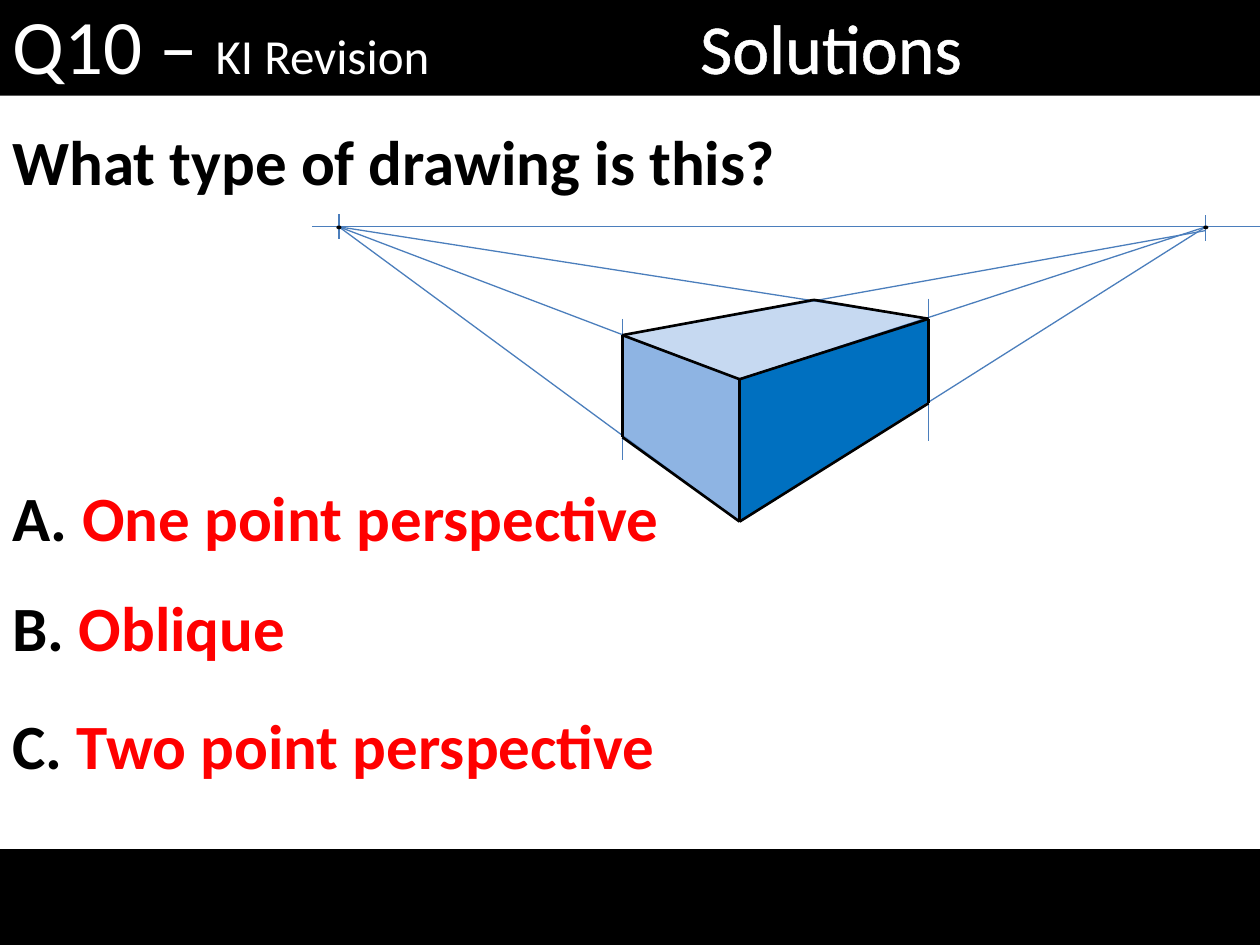
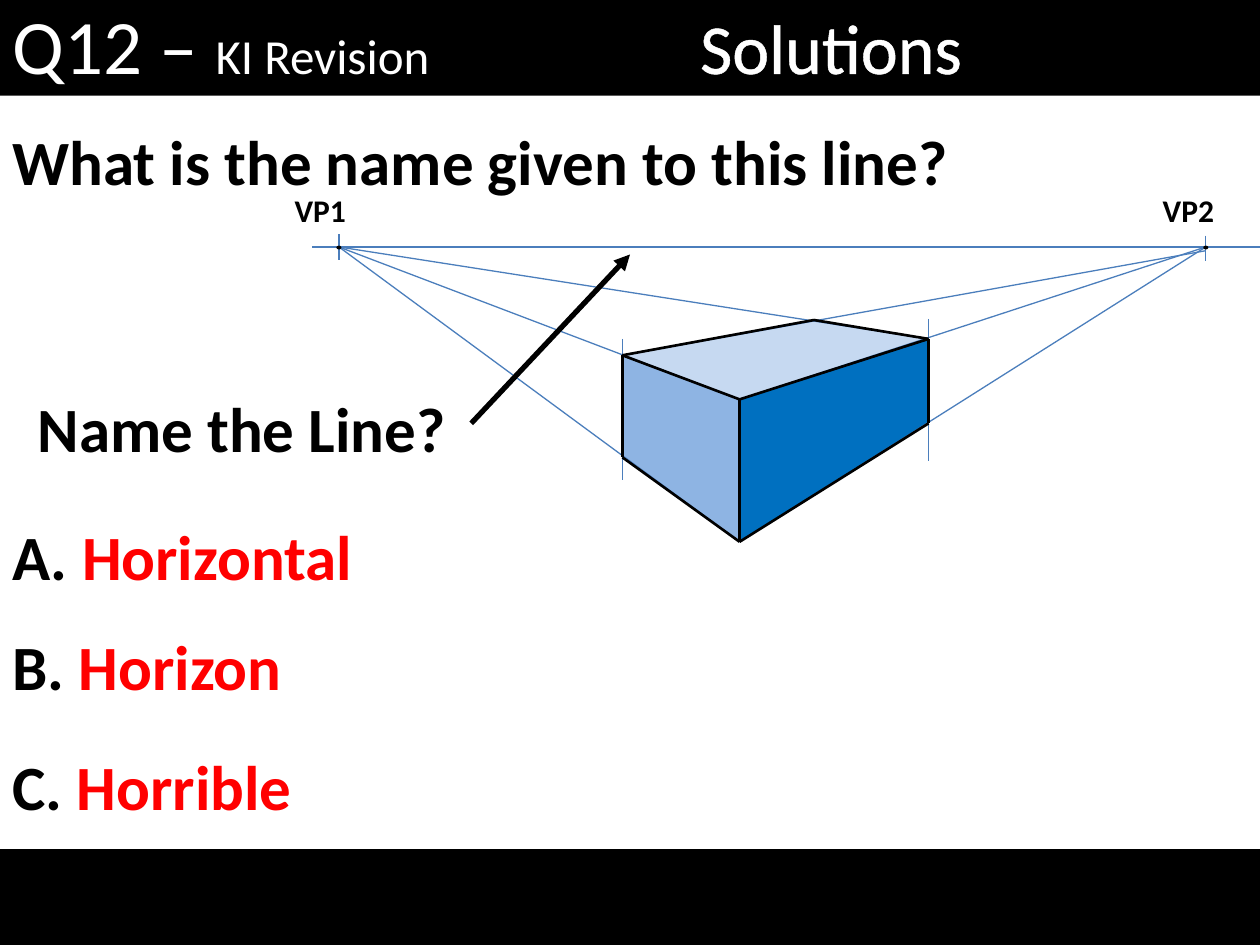
from dataclasses import dataclass

from lxml.etree import SubElement
from pptx import Presentation
from pptx.dml.color import RGBColor
from pptx.enum.shapes import MSO_CONNECTOR, MSO_SHAPE
from pptx.enum.text import MSO_ANCHOR, MSO_AUTO_SIZE, PP_ALIGN
from pptx.oxml.ns import qn
from pptx.util import Pt

PX = 9144  # one hundredth of an inch
WIDE, HIGH = 1000, 750
BAND = 76
FONT = "Calibri"
BLACK, WHITE, RED = "000000", "FFFFFF", "FF0000"
GUIDE, TOP, SIDE, END = "4B7EBC", "C6D9F1", "0070C0", "8EB4E3"

Point = tuple[int, int]


@dataclass(frozen=True)
class Run:
    text: str
    size: int = 36
    hue: str = BLACK
    bold: bool = True


@dataclass(frozen=True)
class Label:
    left: int
    top: int
    width: int
    height: int
    run: Run


@dataclass(frozen=True)
class Arrow:
    start: Point
    end: Point


@dataclass(frozen=True)
class Quiz:
    number: int
    question: str
    answers: tuple[str, ...]
    tops: tuple[int, ...]
    sky: int  # height of the horizon line
    labels: tuple[Label, ...] = ()
    arrow: Arrow | None = None


QUIZZES = (
    Quiz(10, "What type of drawing is this?",
         ("One point perspective", "Oblique", "Two point perspective"),
         (375, 462, 556), 180),
    Quiz(12, "What is the name given to this line?",
         ("Horizontal", "Horizon", "Horrible"),
         (406, 493, 588), 196,
         (Label(224, 147, 87, 40, Run("VP1", 18)),
          Label(913, 147, 87, 40, Run("VP2", 18)),
          Label(20, 304, 362, 71, Run("Name the Line?"))),
         Arrow((374, 336), (500, 202))),
)

# Places in the drawing, with y measured down from the horizon
VP_LEFT, VP_RIGHT = (269, 0), (957, 0)
LEFT, BACK, RIGHT, FRONT = (494, 86), (646, 58), (737, 73), (587, 121)
LEFT_FOOT, RIGHT_FOOT, FRONT_FOOT = (494, 167), (737, 140), (587, 234)

FACES = (
    (TOP, (LEFT, BACK, RIGHT, FRONT)),
    (SIDE, (FRONT, RIGHT, RIGHT_FOOT, FRONT_FOOT)),
    (END, (LEFT, FRONT, FRONT_FOOT, LEFT_FOOT)),
)
GUIDES = (
    ((248, 0), (WIDE, 0)),
    ((269, -10), (269, 10)),
    ((957, -9), (957, 11)),
    (VP_LEFT, FRONT), (VP_LEFT, FRONT_FOOT), (VP_LEFT, RIGHT),
    (VP_RIGHT, FRONT), (VP_RIGHT, FRONT_FOOT), ((957, 3), LEFT),
    ((494, 73), (494, 185)),
    ((737, 57), (737, 170)),
)
EDGES = (
    (RIGHT_FOOT, FRONT_FOOT), (FRONT_FOOT, LEFT_FOOT), (LEFT_FOOT, LEFT),
    (LEFT, BACK), (BACK, RIGHT), (RIGHT, RIGHT_FOOT),
    (LEFT, FRONT), (FRONT, RIGHT), (FRONT, FRONT_FOOT),
)


def color(code: str) -> RGBColor:
    return RGBColor.from_string(code)


def paint(shape, hue: str) -> None:
    """Give a shape a flat fill with no line or shadow."""
    shape.shadow.inherit = False
    shape.fill.solid()
    shape.fill.fore_color.rgb = color(hue)
    shape.line.fill.background()


def add_form(slide, kind: MSO_SHAPE, left: int, top: int, width: int,
             height: int, hue: str = BLACK):
    shape = slide.shapes.add_shape(
        kind, left * PX, top * PX, width * PX, height * PX)
    paint(shape, hue)
    return shape


def add_runs(frame, *runs: Run):
    """Write runs into the first paragraph and return it."""
    para = frame.paragraphs[0]
    para.alignment = PP_ALIGN.LEFT
    for item in runs:
        run = para.add_run()
        run.text = item.text
        run.font.name = FONT
        run.font.size = Pt(item.size)
        run.font.bold = item.bold
        run.font.color.rgb = color(item.hue)
    return para


def add_text(slide, left: int, top: int, width: int, height: int, *runs: Run):
    box = slide.shapes.add_textbox(
        left * PX, top * PX, width * PX, height * PX)
    frame = box.text_frame
    frame.word_wrap = True
    frame.auto_size = MSO_AUTO_SIZE.SHAPE_TO_FIT_TEXT
    add_runs(frame, *runs)
    return frame


def add_line(slide, start: Point, end: Point, hue: str, weight: float):
    line = slide.shapes.add_connector(
        MSO_CONNECTOR.STRAIGHT, *(n * PX for n in start + end))
    line.line.color.rgb = color(hue)
    line.line.width = Pt(weight)
    SubElement(line._element.spPr, qn("a:effectLst"))
    return line


def add_face(slide, hue: str, points: list[Point]) -> None:
    form = slide.shapes.build_freeform(*points[0], scale=PX)
    form.add_line_segments(points[1:], close=True)
    paint(form.convert_to_shape(), hue)


def draw_bands(slide, number: int) -> None:
    head = add_form(slide, MSO_SHAPE.RECTANGLE, 0, 0, WIDE, BAND)
    head.text_frame.vertical_anchor = MSO_ANCHOR.BOTTOM
    add_runs(head.text_frame, Run(f"Q{number} – ", 44, WHITE, False),
             Run("KI Revision", 28, WHITE, False))
    add_form(slide, MSO_SHAPE.RECTANGLE, 0, HIGH - BAND, WIDE, BAND)


def draw_title(slide) -> None:
    frame = add_text(slide, 319, -2, 681, 77,
                     Run("Solutions", 40, WHITE, False))
    frame.vertical_anchor = MSO_ANCHOR.MIDDLE
    para = frame.paragraphs[0]
    para.alignment = PP_ALIGN.CENTER
    props = para.runs[0].font._element
    rim = SubElement(props, qn("a:ln"), w=str(Pt(1.45)))
    fill = SubElement(rim, qn("a:solidFill"))
    SubElement(fill, qn("a:srgbClr"), val=WHITE)
    props.insert(0, rim)


def draw_block(slide, sky: int) -> None:
    """Draw the block and its guide lines below a horizon at sky."""
    def drop(point: Point) -> Point:
        return point[0], point[1] + sky

    for hue, points in FACES:
        add_face(slide, hue, [drop(point) for point in points])
    for lines, hue, weight in ((GUIDES, GUIDE, 0.75), (EDGES, BLACK, 1.5)):
        for start, end in lines:
            add_line(slide, drop(start), drop(end), hue, weight)
    for x, y in (VP_LEFT, VP_RIGHT):
        add_form(slide, MSO_SHAPE.OVAL, x - 2, sky + y - 1, 4, 3)


def draw_arrow(slide, arrow: Arrow) -> None:
    line = add_line(slide, arrow.start, arrow.end, BLACK, 3)
    SubElement(line.line._get_or_add_ln(), qn("a:tailEnd"), type="triangle")


def draw_quiz(slide, quiz: Quiz) -> None:
    draw_bands(slide, quiz.number)
    add_text(slide, 0, 92, 937, 71, Run(quiz.question))
    for letter, answer, top in zip("ABC", quiz.answers, quiz.tops):
        add_text(slide, 0, top, 650, 71,
                 Run(f"{letter}. "), Run(answer, hue=RED))
    draw_block(slide, quiz.sky)
    for item in quiz.labels:
        add_text(slide, item.left, item.top, item.width, item.height, item.run)
    if quiz.arrow:
        draw_arrow(slide, quiz.arrow)
    draw_title(slide)


def main() -> None:
    deck = Presentation()
    deck.slide_width, deck.slide_height = WIDE * PX, HIGH * PX
    for quiz in QUIZZES:
        draw_quiz(deck.slides.add_slide(deck.slide_layouts[6]), quiz)
    deck.save("out.pptx")


if __name__ == "__main__":
    main()
